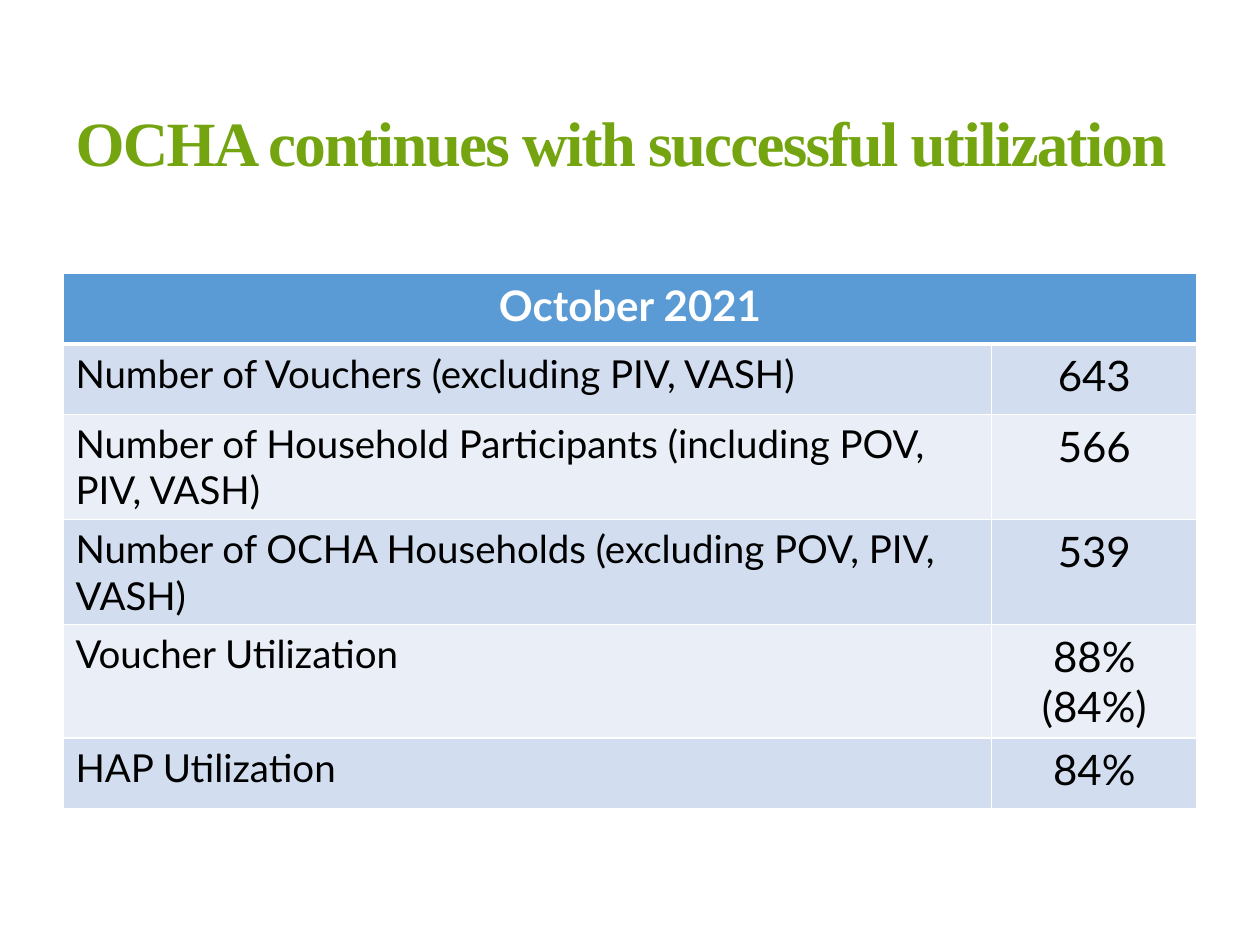
"""Build a slide with a table of voucher utilization."""
import pptx
import pptx.dml.color
import pptx.enum.text
import pptx.oxml
import pptx.oxml.ns
import pptx.util

Inches = pptx.util.Inches
Pt = pptx.util.Pt
ALIGN = pptx.enum.text.PP_ALIGN
ANCHOR = pptx.enum.text.MSO_ANCHOR

TITLE = "OCHA continues with successful utilization"
HEAD = "October 2021"
ROWS = [
    ("Number of Vouchers (excluding PIV, VASH)", "643"),
    ("Number of Household Participants (including POV, PIV, VASH)", "566"),
    ("Number of OCHA Households (excluding POV, PIV, VASH)", "539"),
    ("Voucher Utilization", "88% (84%)"),
    ("HAP Utilization", "84%"),
]
WIDTHS = [7.37, 1.63]
HEIGHTS = [0.56, 0.56, 0.58, 0.56, 0.5, 0.56]
BANDS = ["D2DEEF", "EAEFF7"]
BLUE, GREEN, WHITE, BLACK = "5B9BD5", "74A510", "FFFFFF", "000000"


def color(code):
    return pptx.dml.color.RGBColor.from_string(code)


def write(frame, text, size=24, font="Lato", ink=BLACK, bold=False,
          align=ALIGN.LEFT, space=None):
    frame.word_wrap = True
    para = frame.paragraphs[0]
    para.alignment = align
    run = para.add_run()
    run.text = text
    run.font.size = Pt(size)
    run.font.name = font
    run.font.bold = bold
    run.font.color.rgb = color(ink)
    if space is not None:
        run.font._element.set("spc", str(space))


def edge(cell, **widths):
    props = cell._tc.get_or_add_tcPr()
    for side in "LRTB":
        width = Pt(widths.get(side, 1))
        props.append(pptx.oxml.parse_xml(
            f'<a:ln{side} {pptx.oxml.ns.nsdecls("a")} w="{width}"><a:solidFill>'
            f'<a:srgbClr val="{WHITE}"/></a:solidFill></a:ln{side}>'))


def paint(cell, code):
    cell.fill.solid()
    cell.fill.fore_color.rgb = color(code)


def add_title(slide):
    title = slide.shapes.title
    title.left, title.top = Inches(0.5), Inches(0.58)
    title.width, title.height = Inches(9), Inches(1.08)
    title.text_frame.vertical_anchor = ANCHOR.MIDDLE
    write(title.text_frame, TITLE, size=36, font="Times New Roman",
          ink=GREEN, bold=True, space=-100)


def add_grid(slide):
    grid = slide.shapes.add_table(
        len(HEIGHTS), len(WIDTHS), Inches(0.5), Inches(2.17),
        Inches(sum(WIDTHS)), Inches(sum(HEIGHTS))).table
    for col, width in zip(grid.columns, WIDTHS):
        col.width = Inches(width)
    for row, height in zip(grid.rows, HEIGHTS):
        row.height = Inches(height)

    top = grid.cell(0, 0)
    top.merge(grid.cell(0, 1))
    for cell in grid.rows[0].cells:
        edge(cell, B=3)
        paint(cell, BLUE)
    write(top.text_frame, HEAD, ink=WHITE, bold=True, align=ALIGN.CENTER)

    for r, (label, value) in enumerate(ROWS, 1):
        for cell in grid.rows[r].cells:
            edge(cell, T=3 if r == 1 else 1)
            paint(cell, BANDS[(r - 1) % 2])
        write(grid.cell(r, 0).text_frame, label, size=22)
        write(grid.cell(r, 1).text_frame, value, align=ALIGN.CENTER)


def main():
    deck = pptx.Presentation()
    deck.slide_width, deck.slide_height = Inches(10), Inches(7.5)
    slide = deck.slides.add_slide(deck.slide_layouts[5])
    add_title(slide)
    add_grid(slide)
    deck.save("out.pptx")


if __name__ == "__main__":
    main()
